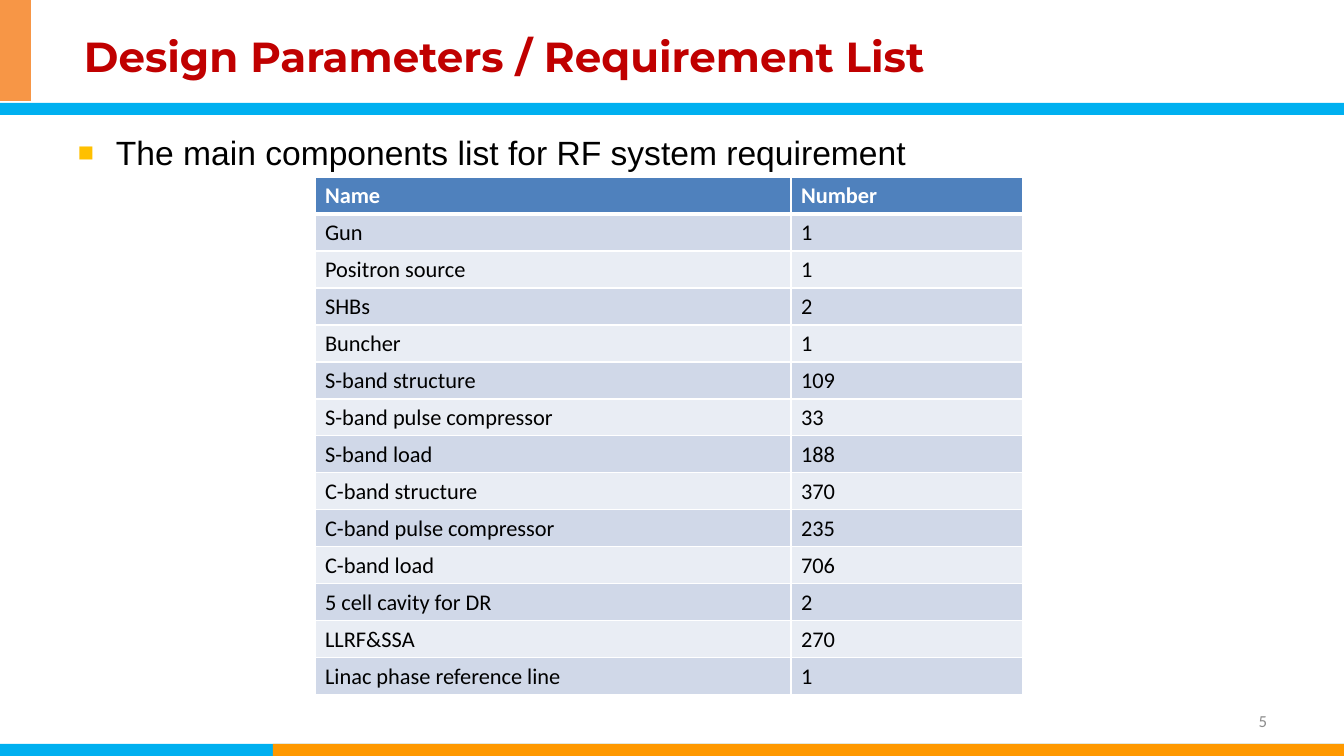
from dataclasses import dataclass

from lxml import etree
from pptx import Presentation
from pptx.dml.color import RGBColor
from pptx.enum.shapes import MSO_SHAPE
from pptx.enum.text import MSO_ANCHOR, PP_ALIGN
from pptx.oxml.ns import qn
from pptx.util import Pt

RECTANGLE = MSO_SHAPE.RECTANGLE
TOP, MIDDLE = MSO_ANCHOR.TOP, MSO_ANCHOR.MIDDLE
LEFT, RIGHT = PP_ALIGN.LEFT, PP_ALIGN.RIGHT
EMU_PER_PX = 12192000 / 1344
SLIDE_W, SLIDE_H = 1344, 756


@dataclass(frozen=True)
class Theme:
    blue: str = "00B0F0"
    orange: str = "FF9900"
    corner: str = "F79646"
    white: str = "FFFFFF"
    bullet: str = "FFC000"
    header: str = "4F81BD"
    bands: tuple = ("D0D8E8", "E9EDF4")
    title_text: tuple = ("Montserrat", 30, "C00000", True)
    body_text: tuple = ("Arial", 24, "000000", False)
    header_text: tuple = ("Calibri", 16, "FFFFFF", True)
    cell_text: tuple = ("Calibri", 16, "000000", False)
    number_text: tuple = ("Calibri", 12, "8C8C8C", False)


THEME = Theme()

COMPONENTS = [
    ("Name", "Number"),
    ("Gun", "1"),
    ("Positron source", "1"),
    ("SHBs", "2"),
    ("Buncher", "1"),
    ("S-band structure", "109"),
    ("S-band pulse compressor", "33"),
    ("S-band load", "188"),
    ("C-band structure", "370"),
    ("C-band pulse compressor", "235"),
    ("C-band load", "706"),
    ("5 cell cavity for DR", "2"),
    ("LLRF&SSA", "270"),
    ("Linac phase reference line", "1"),
]


def px(length):
    return round(length * EMU_PER_PX)


def emu_box(box):
    return [px(length) for length in box]


def set_attributes(target, values):
    for name, value in values.items():
        setattr(target, name, value)


def write_text(paragraph, text, style):
    family, size, color, bold = style
    run = paragraph.add_run()
    run.text = text
    set_attributes(run.font, {"name": family, "size": Pt(size), "bold": bold})
    run.font.color.rgb = RGBColor.from_string(color)


def add_bar(slide, box, color):
    bar = slide.shapes.add_shape(RECTANGLE, *emu_box(box))
    bar.shadow.inherit = False
    bar.fill.solid()
    bar.fill.fore_color.rgb = RGBColor.from_string(color)
    bar.line.fill.background()


def add_label(slide, box, text, style, anchor=MIDDLE, align=LEFT):
    frame = slide.shapes.add_textbox(*emu_box(box)).text_frame
    set_attributes(frame, {"word_wrap": True, "vertical_anchor": anchor})
    paragraph = frame.paragraphs[0]
    paragraph.alignment = align
    write_text(paragraph, text, style)
    return paragraph


def add_bullet(paragraph, indent):
    properties = paragraph._p.get_or_add_pPr()
    properties.set("marL", str(px(indent)))
    properties.set("indent", str(-px(indent)))
    color = etree.SubElement(properties, qn("a:buClr"))
    etree.SubElement(color, qn("a:srgbClr"), val=THEME.bullet)
    etree.SubElement(properties, qn("a:buSzPct"), val="80000")
    etree.SubElement(properties, qn("a:buFont"), typeface="Arial")
    etree.SubElement(properties, qn("a:buChar"), char="■")


def add_borders(cell, widths):
    """Draw white cell borders; widths maps the sides L, R, T, B to points."""
    properties = cell._tc.get_or_add_tcPr()
    for position, (side, width) in enumerate(widths.items()):
        line = etree.Element(qn(f"a:ln{side}"), w=str(Pt(width)))
        fill = etree.SubElement(line, qn("a:solidFill"))
        etree.SubElement(fill, qn("a:srgbClr"), val=THEME.white)
        properties.insert(position, line)


def add_frame_bars(slide, box):
    left, top, width, height = box
    bar_height, blue_width = 12, 273
    foot = top + height - bar_height
    add_bar(slide, (left, foot, width, bar_height), THEME.blue)
    add_bar(slide, (left + blue_width, foot, width - blue_width, bar_height), THEME.orange)
    add_bar(slide, (left, top + 103, width, bar_height), THEME.blue)
    add_bar(slide, (left, top, 31, 101), THEME.corner)


def add_topic(slide, box, text):
    topic = add_label(slide, box, text, THEME.body_text, anchor=TOP)
    set_attributes(topic, {"line_spacing": 1.1, "space_after": Pt(10)})
    add_bullet(topic, 38)


def add_component_table(slide, box, name_width):
    width = box[2]
    table = slide.shapes.add_table(len(COMPONENTS), 2, *emu_box(box)).table
    table.horz_banding = False
    for column, column_width in zip(table.columns, (name_width, width - name_width)):
        column.width = px(column_width)
    for row_index, values in enumerate(COMPONENTS):
        is_header = row_index == 0
        fill = THEME.header if is_header else THEME.bands[(row_index - 1) % 2]
        style = THEME.header_text if is_header else THEME.cell_text
        borders = {"L": 1, "R": 1, "T": 3 if row_index == 1 else 1, "B": 3 if is_header else 1}
        for cell, value in zip(table.rows[row_index].cells, values):
            cell.fill.solid()
            cell.fill.fore_color.rgb = RGBColor.from_string(fill)
            set_attributes(cell, {"margin_top": px(5), "margin_bottom": px(4)})
            write_text(cell.text_frame.paragraphs[0], value, style)
            add_borders(cell, borders)


def build_requirement_slide(presentation):
    slide = presentation.slides.add_slide(presentation.slide_layouts[6])
    add_frame_bars(slide, (0, 0, SLIDE_W, SLIDE_H))
    add_label(slide, (74, 16, 1186, 80), "Design Parameters / Requirement List", THEME.title_text)
    add_label(slide, (964, 701, 313, 40), "5", THEME.number_text, align=RIGHT)
    add_topic(slide, (68, 123, 1184, 51), "The main components list for RF system requirement")
    add_component_table(slide, (315, 177, 708, 37 * len(COMPONENTS)), 476)


def main():
    presentation = Presentation()
    set_attributes(presentation, {"slide_width": px(SLIDE_W), "slide_height": px(SLIDE_H)})
    build_requirement_slide(presentation)
    presentation.save("out.pptx")


if __name__ == "__main__":
    main()
